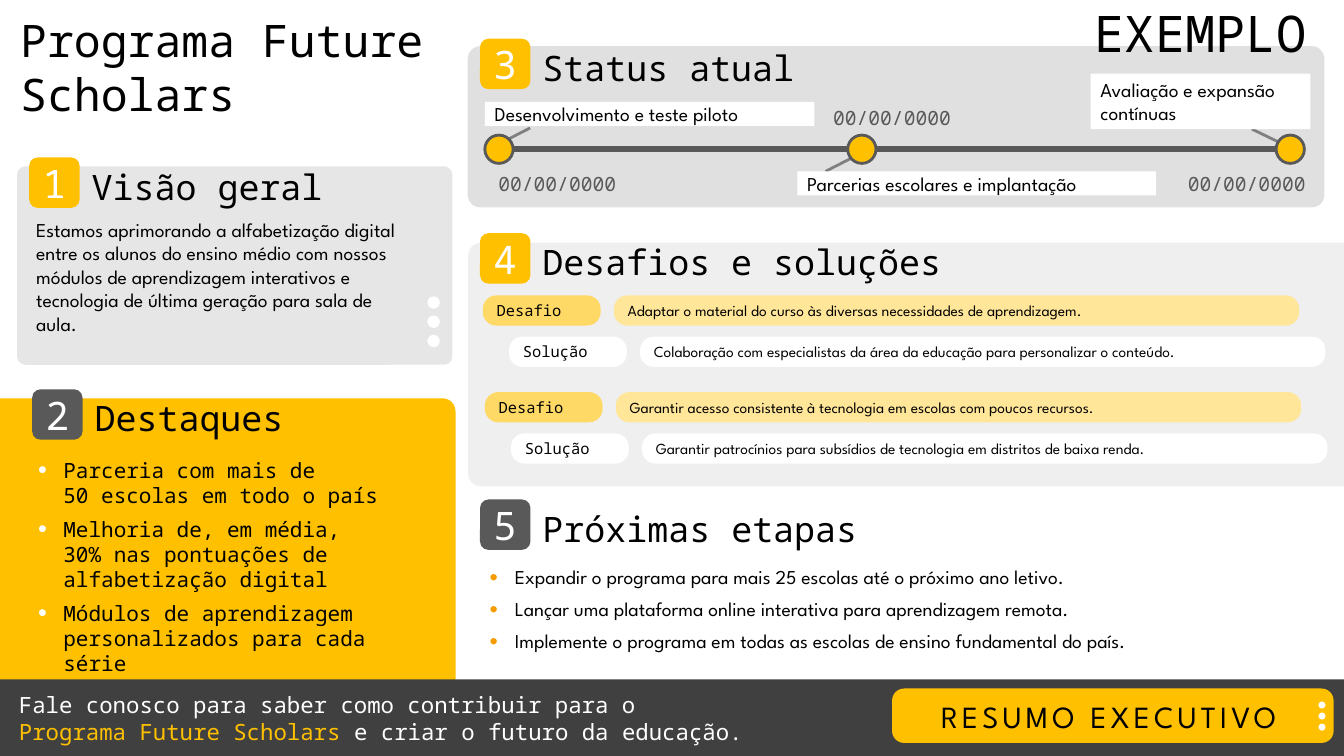
"""Build the one-page executive summary slide of the Future Scholars programme."""
import copy

import pptx
import pptx.dml.color
import pptx.enum.shapes
import pptx.enum.text
import pptx.oxml
import pptx.oxml.ns
import pptx.util

Pt = pptx.util.Pt
SHAPE = pptx.enum.shapes.MSO_SHAPE
ANCHOR = pptx.enum.text.MSO_ANCHOR
ALIGN = pptx.enum.text.PP_ALIGN
MONO, SANS = "Noto Sans Mono", "League Spartan"
GOLD, GRAY, WHITE, BLACK = "FFC000", "595959", "FFFFFF", "000000"

deck = pptx.Presentation()
deck.slide_width, deck.slide_height = Pt(960), Pt(540)
page = deck.slides.add_slide(deck.slide_layouts[6])


def color(hex_code):
    return pptx.dml.color.RGBColor.from_string(hex_code)


def block(text, frame, kind=None, fill=None, round_by=None, border=None, font=SANS,
          size=14, ink=BLACK, align=ALIGN.LEFT, anchor=ANCHOR.TOP,
          insets=(7.2, 3.6, 7.2, 3.6), tracking=None, bullet=None, highlight=None):
    frame = [Pt(length) for length in frame]
    if kind is None:
        box = page.shapes.add_textbox(*frame)
    else:
        box = page.shapes.add_shape(kind, *frame)
        box.shadow.inherit = False
        box.fill.solid()
        box.fill.fore_color.rgb = color(fill)
        if round_by is not None:
            box.adjustments[0] = round_by
        if border:
            box.line.color.rgb = color(border)
            box.line.width = Pt(2)
        else:
            box.line.fill.background()
    if not text:
        return box
    body = box.text_frame
    body.word_wrap = True
    body.vertical_anchor = anchor
    body.margin_left, body.margin_top, body.margin_right, body.margin_bottom = map(Pt, insets)
    for index, line in enumerate(text.split("\n")):
        para = body.add_paragraph() if index else body.paragraphs[0]
        para.alignment = align
        if bullet:
            para.space_after = Pt(6)
            properties = para._p.get_or_add_pPr()
            properties.set("marL", str(Pt(18)))
            properties.set("indent", str(-Pt(18)))
            namespace = pptx.oxml.ns.nsdecls("a")
            for xml in (f'<a:buClr {namespace}><a:srgbClr val="{bullet}"/></a:buClr>',
                        f'<a:buSzPct {namespace} val="120000"/>',
                        f'<a:buFont {namespace} typeface="Arial"/>',
                        f'<a:buChar {namespace} char="•"/>'):
                properties.append(pptx.oxml.parse_xml(xml))
        for row_index, row in enumerate(line.split("\v")):
            if row_index:
                para.add_line_break()
            for piece in filter(None, row.partition(highlight) if highlight else [row]):
                span = para.add_run()
                span.text = piece
                span.font.name, span.font.size = font, Pt(size)
                span.font.color.rgb = color(GOLD if piece == highlight else ink)
                if tracking:
                    span._r.get_or_add_rPr().set("spc", str(tracking * 100))
        for line_break in para._p.findall(pptx.oxml.ns.qn("a:br")):
            line_break.append(copy.deepcopy(span._r.rPr))
    return box


def rule(start, end, stroke, width):
    line = page.shapes.add_connector(
        pptx.enum.shapes.MSO_CONNECTOR.STRAIGHT, *[Pt(value) for value in (*start, *end)])
    line.line.color.rgb = color(stroke)
    line.line.width = Pt(width)
    line._element.spPr.append(
        pptx.oxml.parse_xml(f'<a:effectLst {pptx.oxml.ns.nsdecls("a")}/>'))


challenges_panel = block("", (560.1, -52.5, 174.2, 625.6), SHAPE.ROUND_2_SAME_RECTANGLE,
                         "EFEFEF", 0.054)
challenges_panel.rotation = 270
for kind, frame, fill, round_by in [
    (SHAPE.ROUNDED_RECTANGLE, (334.1, 33, 612, 115.2), "E0E0E0", 0.079),
    (SHAPE.ROUND_1_RECTANGLE, (0, 284.5, 325.4, 255.5), GOLD, 0.036),
    (SHAPE.ROUNDED_RECTANGLE, (12.2, 118.8, 311, 141.8), "E7E6E6", 0.042),
    (SHAPE.RECTANGLE, (0, 485.3, 960, 54.7), "404040", None),
]:
    block("", frame, kind, fill, round_by)

block("Programa Future Scholars", (14.4, 9.4, 290.9, 90.7), font=MONO, size=32, insets=(0,) * 4)
block("EXEMPLO", (782, 1.4, 163.4, 39.6), font=MONO, size=36, insets=(0,) * 4)

sections = [
    ("Visão geral", 20.9, 112.5, 233, GOLD),
    ("Destaques", 23, 278.1, 231, GRAY),
    ("Status atual", 342.9, 27.7, 296, GOLD),
    ("Desafios e soluções", 342.9, 166.6, 412, GOLD),
    ("Próximas etapas", 342.9, 356.8, 231, GRAY),
]
for number, (heading, left, top, width, fill) in enumerate(sections, 1):
    block(str(number), (left, top, 36, 36), SHAPE.ROUNDED_RECTANGLE, fill, font=MONO, size=28,
          ink=WHITE, align=ALIGN.CENTER, anchor=ANCHOR.MIDDLE, insets=(0,) * 4, tracking=-3)
    block(heading, (left + 44.6, top + 7.5, width, 25.9), font=MONO, size=25,
          anchor=ANCHOR.MIDDLE, insets=(0,) * 4)

block("Estamos aprimorando a alfabetização digital entre os alunos do ensino médio com nossos "
      "módulos de aprendizagem interativos e tecnologia de última geração para sala de aula.",
      (18.7, 151.9, 286.6, 92.2))
block("Parceria com mais de \v50 escolas em todo o país\n"
      "Melhoria de, em média, \v30% nas pontuações de alfabetização digital\n"
      "Módulos de aprendizagem personalizados para cada série",
      (20.2, 323.3, 301.7, 164.9), font=MONO, size=15, bullet=WHITE)
block("Expandir o programa para mais 25 escolas até o próximo ano letivo.\n"
      "Lançar uma plataforma online interativa para aprendizagem remota.\n"
      "Implemente o programa em todas as escolas de ensino fundamental do país.",
      (342.7, 400.3, 608.4, 70.6), bullet="F59C00")

for start, end in [((922.3, 105.8), (894.2, 92.2)), ((589.7, 122.4), (617.8, 108)),
                   ((350.6, 105.8), (378.7, 91.4))]:
    rule(start, end, "808080", 2)
rule((355.7, 106.6), (928.8, 106.6), GRAY, 4)
milestones = [
    ("Desenvolvimento e teste piloto", (346.3, 72.7, 235.4, 17.3), 346.3, (342.7, 119.5)),
    ("Parcerias escolares e implantação", (569.5, 122.4, 256.3, 17.3), 605.5, (581.8, 72)),
    ("Avaliação e expansão contínuas", (779, 52.6, 157, 39.6), 911.5, (835.2, 119.5)),
]
for label, frame, marker_left, date_corner in milestones:
    block("", (marker_left, 96.5, 20.2, 20.2), SHAPE.OVAL, GOLD, border=GRAY)
    block(label, frame, SHAPE.RECTANGLE, WHITE, anchor=ANCHOR.MIDDLE, insets=(7.2, 0, 7.2, 0))
    block("00/00/0000", (*date_corner, 110.9, 24.5), font=MONO, ink=GRAY, align=ALIGN.CENTER)

challenges = [
    (344.9, 211, "Adaptar o material do curso às diversas necessidades de aprendizagem.",
     "Colaboração com especialistas da área da educação para personalizar o conteúdo."),
    (346.3, 280.1, "Garantir acesso consistente à tecnologia em escolas com poucos recursos.",
     "Garantir patrocínios para subsídios de tecnologia em distritos de baixa renda."),
]
for left, top, challenge, solution in challenges:
    for text, shift, width, fill, font, drop in [
        ("Desafio", 0, 84.2, "FFD966", MONO, 0),
        (challenge, 93.6, 489.6, "FFE699", SANS, 0),
        ("Solução", 18.7, 84.2, WHITE, MONO, 29.5),
        (solution, 112.3, 489.6, WHITE, SANS, 29.5),
    ]:
        block(text, (left + shift, top + drop, width, 21.6), SHAPE.ROUNDED_RECTANGLE, fill,
              0.448, font=font, size=11, anchor=ANCHOR.MIDDLE, insets=(7.2, 0, 0, 0))

block("Fale conosco para saber como contribuir para o \v"
      "Programa Future Scholars e criar o futuro da educação.",
      (6.5, 490.3, 601.9, 46.1), font=MONO, size=16, ink=WHITE,
      highlight="Programa Future Scholars ")
block("RESUMO EXECUTIVO", (637.2, 491.8, 315.4, 38.9), SHAPE.ROUNDED_RECTANGLE, GOLD, 0.221,
      size=22, align=ALIGN.CENTER, anchor=ANCHOR.MIDDLE, insets=(7.2, 0, 13, 0), tracking=3)

for left, top, diameter, step in [(305.3, 211.7, 8.9, 13.7), (941.8, 501.1, 5, 7.9)]:
    for index in range(3):
        block("", (left, top + index * step, diameter, diameter), SHAPE.OVAL, WHITE)

deck.save("out.pptx")
